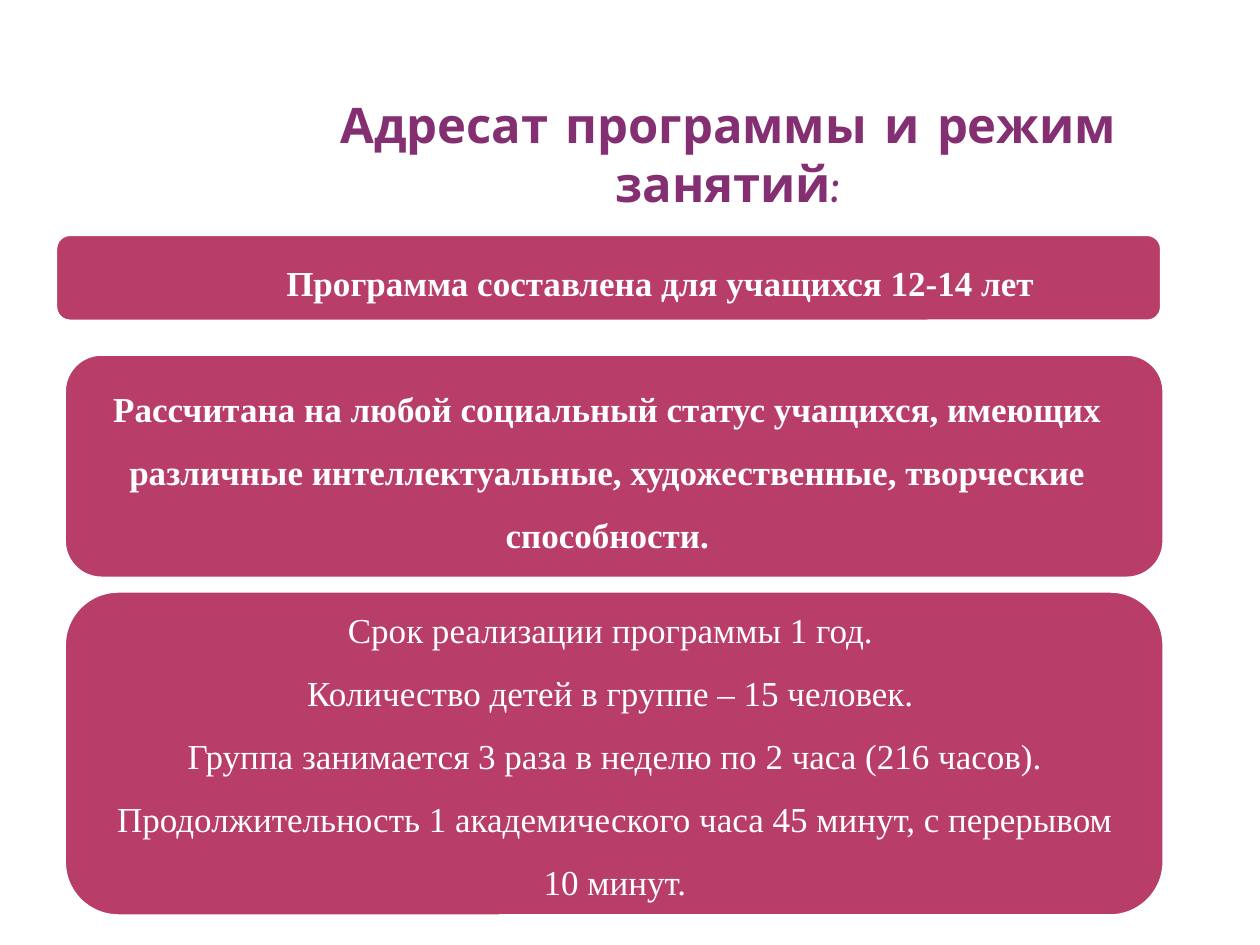
import pptx
import pptx.dml.color
import pptx.enum.shapes
import pptx.enum.text
import pptx.util
from lxml import etree
from pptx.oxml.ns import qn
from pptx.util import Inches

RGBColor = pptx.dml.color.RGBColor
PLUM = RGBColor(0x85, 0x2F, 0x73)
RASPBERRY = RGBColor(0xB8, 0x3D, 0x68)
WHITE = RGBColor(0xFF, 0xFF, 0xFF)
TITLE_OUTLINE = RGBColor(0xEB, 0xC0, 0xC9)

MIDDLE = pptx.enum.text.MSO_ANCHOR.MIDDLE
TITLE_FONT = {"name": "Comic Neue", "size": pptx.util.Pt(28), "bold": True}
BODY_FONT = {"name": "Times New Roman", "size": pptx.util.Pt(20)}
PANEL_FRAME = {
    "vertical_anchor": MIDDLE,
    "margin_left": Inches(0.24),
    "margin_right": Inches(0.24),
    "margin_top": 0,
    "margin_bottom": 0,
}


def apply(target, values):
    for name, value in values.items():
        setattr(target, name, value)


class SlideBuilder:
    def __init__(self, slide):
        self.slide = slide

    def text(self, box, lines, font, color, frame_format=None, paragraph_format=None):
        frame = self.slide.shapes.add_textbox(*map(Inches, box)).text_frame
        apply(frame, {"word_wrap": True, **(frame_format or {})})
        for number, line in enumerate(lines):
            paragraph = frame.add_paragraph() if number else frame.paragraphs[0]
            apply(paragraph, {"alignment": pptx.enum.text.PP_ALIGN.CENTER,
                              **(paragraph_format or {})})
            run = paragraph.add_run()
            run.text = line
            apply(run.font, font)
            run.font.color.rgb = color
        return frame

    def title(self, box, line):
        frame = self.text(box, [line], TITLE_FONT, PLUM)
        # Thin pale outline around the letters
        properties = frame.paragraphs[0].runs[0].font._element
        outline = etree.Element(qn("a:ln"), w=str(pptx.util.Pt(0.75)))
        fill = etree.SubElement(outline, qn("a:solidFill"))
        etree.SubElement(fill, qn("a:srgbClr"), val=str(TITLE_OUTLINE))
        properties.insert(0, outline)

    def panel(self, box, text_box, lines, bold, paragraph_format):
        panel = self.slide.shapes.add_shape(
            pptx.enum.shapes.MSO_SHAPE.ROUNDED_RECTANGLE, *map(Inches, box))
        panel.shadow.inherit = False
        panel.fill.solid()
        panel.fill.fore_color.rgb = RASPBERRY
        panel.line.color.rgb = WHITE
        panel.line.width = pptx.util.Pt(2)
        self.text(text_box, lines, {**BODY_FONT, "bold": bold}, WHITE,
                  PANEL_FRAME, paragraph_format)


def main():
    presentation = pptx.Presentation()
    presentation.slide_width = Inches(10)
    presentation.slide_height = Inches(7.5)
    builder = SlideBuilder(presentation.slides.add_slide(presentation.slide_layouts[6]))

    # Heading
    builder.title((1.95, 0.7, 7.66, 1.02), "Адресат программы и режим занятий:")

    # Social status of the pupils
    space_after = pptx.util.Pt(7)
    builder.panel(
        (0.51, 2.81, 8.73, 1.78), (0.51, 2.81, 8.62, 1.7),
        ["Рассчитана на любой социальный статус учащихся, имеющих различные "
         "интеллектуальные, художественные, творческие способности."],
        True, {"line_spacing": 1.5, "space_after": space_after})

    # Age of the pupils
    builder.panel(
        (0.44, 1.86, 8.78, 0.69), (0.87, 1.48, 8.74, 1.56),
        ["Программа составлена для учащихся 12-14 лет"],
        True, {"line_spacing": 0.9, "space_after": space_after})

    # Schedule
    builder.panel(
        (0.51, 4.69, 8.73, 2.58), (0.62, 4.69, 8.52, 2.45),
        ["Срок реализации программы 1 год. ",
         "Количество детей в группе – 15 человек. ",
         "Группа занимается 3 раза в неделю по 2 часа (216 часов). "
         "Продолжительность 1 академического часа 45 минут, с перерывом 10 минут."],
        False, {"line_spacing": 1.5})

    presentation.save("out.pptx")


if __name__ == "__main__":
    main()
